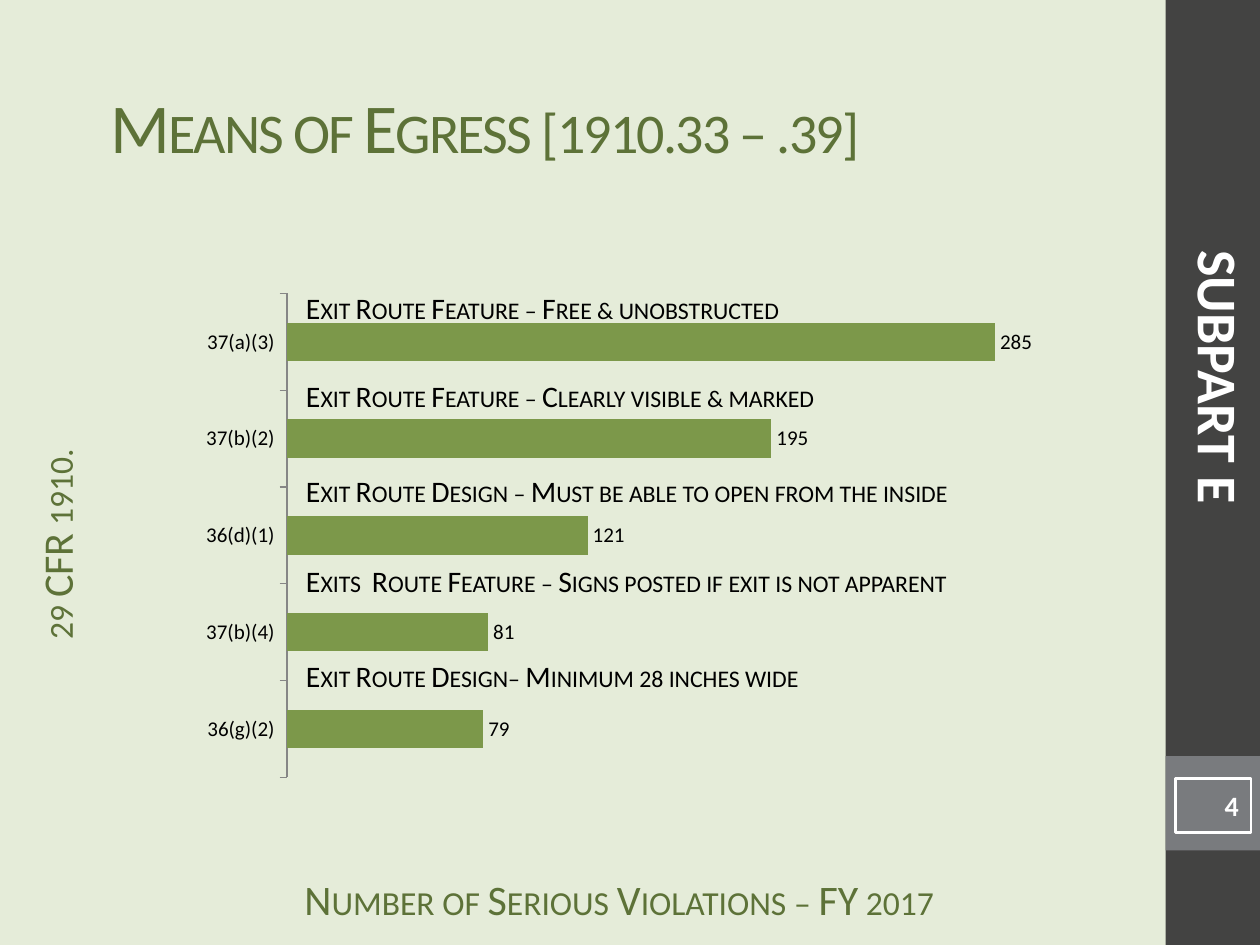
from pptx import Presentation
from pptx.chart.data import CategoryChartData
from pptx.dml.color import RGBColor
from pptx.enum.chart import XL_CHART_TYPE, XL_LABEL_POSITION, XL_TICK_LABEL_POSITION, XL_TICK_MARK
from pptx.enum.shapes import MSO_SHAPE
from pptx.enum.text import MSO_ANCHOR, PP_ALIGN
from pptx.util import Inches, Pt

FONT = "Calibri"
BACKGROUND = "E5ECD9"
DARK_GREEN = "5D7238"
BAR_GREEN = "7C984A"
CHARCOAL = "434342"
GRAY = "797B7E"
AXIS_GRAY = "868686"
WHITE = "FFFFFF"
BLACK = "000000"

VIOLATIONS = [
    ("36(g)(2)", 79),
    ("37(b)(4)", 81),
    ("36(d)(1)", 121),
    ("37(b)(2)", 195),
    ("37(a)(3)", 285),
]
DESCRIPTIONS = [
    ("Exit Route Feature – Free & unobstructed", 2.25),
    ("Exit Route Feature – Clearly visible & marked", 2.95),
    ("Exit Route Design – Must be able to open from the inside", 3.7),
    ("Exits  Route Feature – Signs posted if exit is not apparent", 4.42),
    ("Exit Route Design– Minimum 28 inches wide", 5.17),
]


def color(value):
    return RGBColor.from_string(value)


def write_text(shape, text, size=17, fill=BLACK, bold=False, small_caps=False,
               spacing=0, align=PP_ALIGN.LEFT, anchor=MSO_ANCHOR.TOP,
               wrap=True, margin_top=0.05):
    frame = shape.text_frame
    frame.word_wrap = wrap
    frame.vertical_anchor = anchor
    frame.margin_top = Inches(margin_top)
    paragraph = frame.paragraphs[0]
    paragraph.alignment = align
    run = paragraph.add_run()
    run.text = text
    run.font.name = FONT
    run.font.size = Pt(size)
    run.font.bold = bold
    run.font.color.rgb = color(fill)
    properties = run._r.get_or_add_rPr()
    if small_caps:
        properties.set("cap", "small")
    if spacing:
        properties.set("spc", str(spacing * 100))


def add_text(slide, box, text, rotation=0, **text_format):
    shape = slide.shapes.add_textbox(*map(Inches, box))
    shape.rotation = rotation
    write_text(shape, text, **text_format)


def add_rectangle(slide, box, fill=None, line=None):
    shape = slide.shapes.add_shape(MSO_SHAPE.RECTANGLE, *map(Inches, box))
    shape.shadow.inherit = False
    if fill:
        shape.fill.solid()
        shape.fill.fore_color.rgb = color(fill)
    else:
        shape.fill.background()
    if line:
        shape.line.color.rgb = color(line)
        shape.line.width = Pt(1.5)
    else:
        shape.line.fill.background()
    return shape


def add_sidebar(slide, box):
    left, top, width, height = box
    add_rectangle(slide, box, CHARCOAL)
    add_rectangle(slide, (left, top + 6, width, width), GRAY)
    number = add_rectangle(slide, (left + 0.08, top + 6.18, 0.6, 0.43), line=WHITE)
    write_text(number, "4", size=16, fill=WHITE, bold=True,
               align=PP_ALIGN.RIGHT, anchor=MSO_ANCHOR.MIDDLE)
    add_text(slide, (left - 2.56, top + 2.67, 5.98, 0.64), "SUBPART E", rotation=90,
             size=32, fill=WHITE, bold=True, align=PP_ALIGN.CENTER)


def add_headings(slide, box):
    left, top, width, height = box
    add_text(slide, (left + 0.78, top + 0.25, 8.56, 1.5), "Means of Egress [1910.33 – .39]",
             size=40, fill=DARK_GREEN, small_caps=True, spacing=-1, anchor=MSO_ANCHOR.MIDDLE)
    axis_format = dict(size=24, fill=DARK_GREEN, small_caps=True,
                       align=PP_ALIGN.CENTER, margin_top=0)
    add_text(slide, (left + 2.08, top + height - 0.57, 5.67, 0.33),
             "Number of Serious Violations – FY 2017", **axis_format)
    add_text(slide, (left - 1.56, top + 4.03, 4.19, 0.58), "29 CFR 1910.",
             rotation=270, **axis_format)


def add_violations_chart(slide, box):
    data = CategoryChartData()
    data.categories = [citation for citation, count in VIOLATIONS]
    data.add_series("Series 1", [count for citation, count in VIOLATIONS])
    chart = slide.shapes.add_chart(XL_CHART_TYPE.BAR_CLUSTERED, *map(Inches, box), data).chart
    chart.has_legend = False
    chart.has_title = False
    chart.font.name = FONT
    chart.font.size = Pt(10)
    chart.font.color.rgb = color(BLACK)

    category_axis = chart.category_axis
    category_axis.major_tick_mark = XL_TICK_MARK.OUTSIDE
    category_axis.tick_label_position = XL_TICK_LABEL_POSITION.NEXT_TO_AXIS
    category_axis.tick_labels.font.size = Pt(12)
    category_axis.format.line.color.rgb = color(AXIS_GRAY)
    value_axis = chart.value_axis
    value_axis.minimum_scale = 0
    value_axis.maximum_scale = 300
    value_axis.has_major_gridlines = False
    value_axis.visible = False

    plot = chart.plots[0]
    plot.gap_width = 150
    plot.vary_by_categories = False
    series = plot.series[0]
    series.format.fill.solid()
    series.format.fill.fore_color.rgb = color(BAR_GREEN)
    labels = series.data_labels
    labels.show_value = True
    labels.position = XL_LABEL_POSITION.OUTSIDE_END
    labels.font.size = Pt(12)


def add_chart_region(slide, box):
    add_violations_chart(slide, box)
    for text, top in DESCRIPTIONS:
        add_text(slide, (box[0] + 0.83, top, 5.49, 0.39), text, small_caps=True, wrap=False)


def main():
    presentation = Presentation()
    presentation.slide_width = Inches(10)
    presentation.slide_height = Inches(7.5)
    slide = presentation.slides.add_slide(presentation.slide_layouts[6])
    slide.background.fill.solid()
    slide.background.fill.fore_color.rgb = color(BACKGROUND)
    add_headings(slide, (0, 0, 9.25, 7.5))
    add_chart_region(slide, (1.5, 2.25, 6.83, 4))
    add_sidebar(slide, (9.25, 0, 0.75, 7.5))
    presentation.save("out.pptx")


if __name__ == "__main__":
    main()
